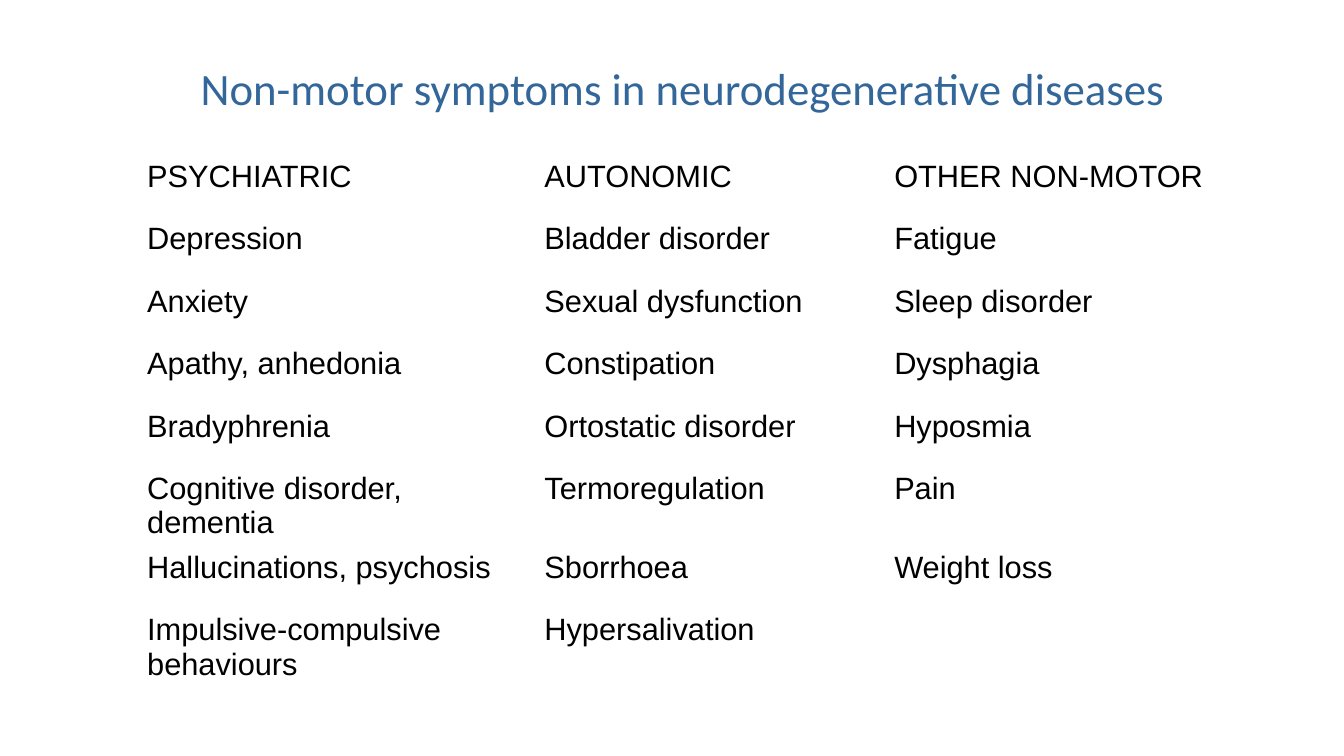
"""Build the slide on non-motor symptoms in neurodegenerative diseases."""
from dataclasses import dataclass
from itertools import zip_longest

from pptx import Presentation
from pptx.dml.color import RGBColor
from pptx.enum.text import MSO_ANCHOR, PP_ALIGN
from pptx.util import Inches, Pt


@dataclass(frozen=True)
class Theme:
    title_color: RGBColor = RGBColor(0x33, 0x66, 0x99)
    body_color: RGBColor = RGBColor(0, 0, 0)
    title_font: str = "Calibri"
    body_font: str = "Arial"
    title_size: Pt = Pt(32)
    body_size: Pt = Pt(22)


THEME = Theme()
TITLE = "Non-motor symptoms in neurodegenerative diseases"
SYMPTOMS = {
    "PSYCHIATRIC": [
        "Depression", "Anxiety", "Apathy, anhedonia", "Bradyphrenia",
        "Cognitive disorder, dementia", "Hallucinations, psychosis",
        "Impulsive-compulsive behaviours",
    ],
    "АUTONOMIC": [
        "Bladder disorder", "Sexual dysfunction", "Constipation",
        "Ortostatic disorder", "Termoregulation", "Sborrhoea", "Hypersalivation",
    ],
    "OTHER NON-MOTOR": [
        "Fatigue", "Sleep disorder", "Dysphagia", "Hyposmia", "Pain", "Weight loss",
    ],
}
COLUMN_WIDTHS = [3.94, 3.47, 3.5]
ROW_HEIGHT = 0.62


def apply_format(target, values):
    for name, value in values.items():
        setattr(target, name, value)


def write_text(text_frame, text, font_format, color):
    paragraph = text_frame.paragraphs[0]
    run = paragraph.add_run()
    run.text = text
    apply_format(run.font, font_format)
    run.font.color.rgb = color
    return paragraph


def add_title(slide):
    title = slide.shapes.title
    apply_format(title, {
        "left": Inches(1.89), "top": Inches(0.57),
        "width": Inches(9.85), "height": Inches(0.66),
    })
    apply_format(title.text_frame, {
        "word_wrap": True, "vertical_anchor": MSO_ANCHOR.MIDDLE,
    })
    font_format = {"name": THEME.title_font, "size": THEME.title_size}
    paragraph = write_text(title.text_frame, TITLE, font_format, THEME.title_color)
    apply_format(paragraph, {"alignment": PP_ALIGN.LEFT, "line_spacing": 0.9})


def add_symptom_table(slide):
    rows = [tuple(SYMPTOMS), *zip_longest(*SYMPTOMS.values(), fillvalue="")]
    table = slide.shapes.add_table(
        len(rows), len(COLUMN_WIDTHS), Inches(1.36), Inches(1.53),
        Inches(sum(COLUMN_WIDTHS)), Inches(ROW_HEIGHT * len(rows)),
    ).table
    apply_format(table, {"first_row": False, "horz_banding": False})
    for column, width in zip(table.columns, COLUMN_WIDTHS):
        column.width = Inches(width)
    font_format = {"name": THEME.body_font, "size": THEME.body_size}
    for table_row, texts in zip(table.rows, rows):
        table_row.height = Inches(ROW_HEIGHT)
        for cell, text in zip(table_row.cells, texts):
            cell.fill.background()
            if text:
                write_text(cell.text_frame, text, font_format, THEME.body_color)


def main():
    presentation = Presentation()
    apply_format(presentation, {
        "slide_width": Inches(13.33), "slide_height": Inches(7.5),
    })
    slide = presentation.slides.add_slide(presentation.slide_layouts[5])
    add_title(slide)
    add_symptom_table(slide)
    presentation.save("out.pptx")


if __name__ == "__main__":
    main()
